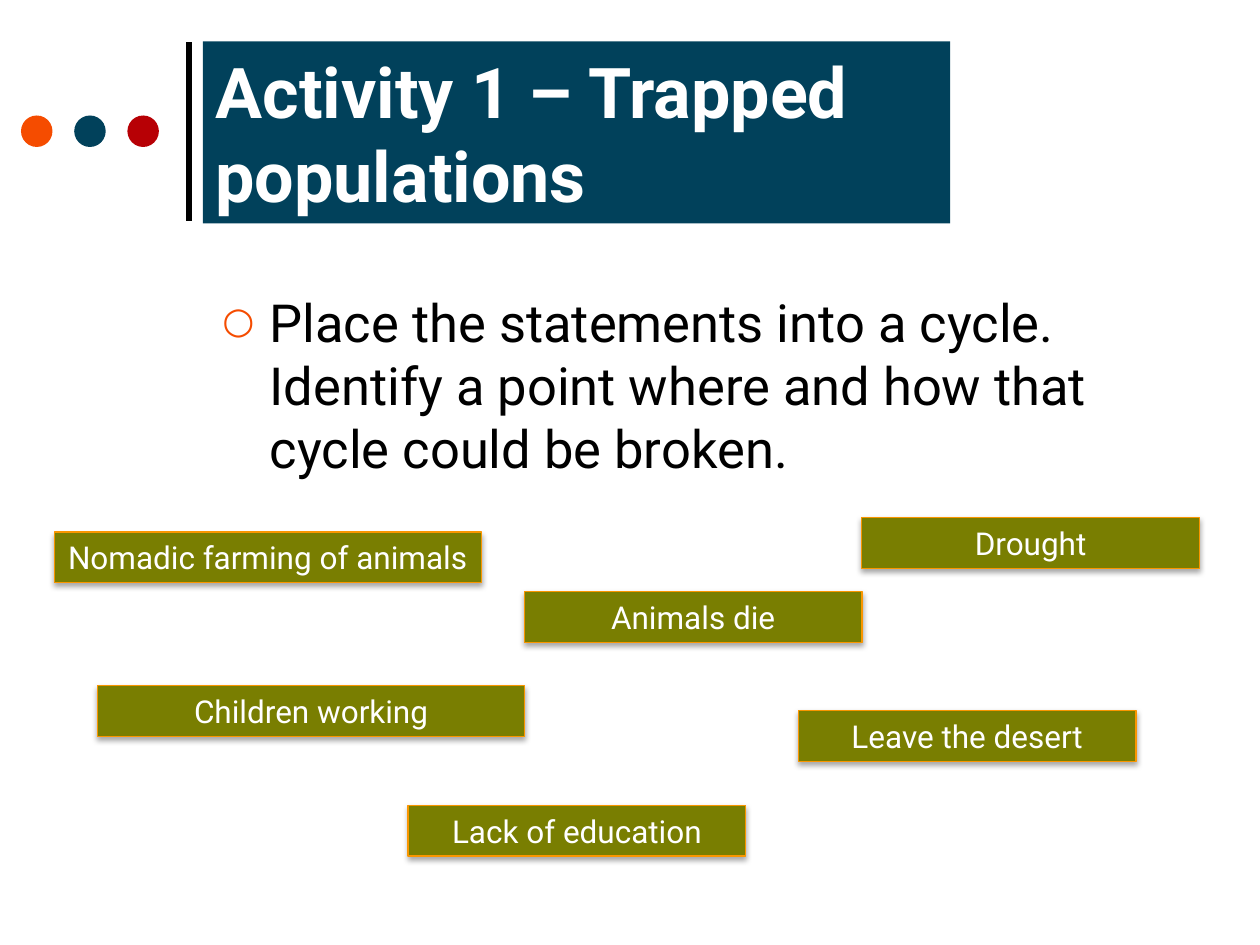
from lxml import etree
from pptx import Presentation
from pptx.dml.color import RGBColor
from pptx.enum.shapes import MSO_CONNECTOR, MSO_SHAPE
from pptx.enum.text import MSO_ANCHOR, MSO_AUTO_SIZE, PP_ALIGN
from pptx.oxml.ns import qn
from pptx.util import Pt

RECT, OVAL = MSO_SHAPE.RECTANGLE, MSO_SHAPE.OVAL
STRAIGHT = MSO_CONNECTOR.STRAIGHT
LEFT, CENTER = PP_ALIGN.LEFT, PP_ALIGN.CENTER
TOP, MIDDLE = MSO_ANCHOR.TOP, MSO_ANCHOR.MIDDLE
NO_FIT, GROW = MSO_AUTO_SIZE.NONE, MSO_AUTO_SIZE.SHAPE_TO_FIT_TEXT

ORANGE, NAVY, RED = "F54C00", "01415B", "B70005"
OLIVE, AMBER, WHITE, BLACK = "797E01", "F99600", "FFFFFF", "000000"


def rgb(value):
    return RGBColor.from_string(value)


def child(parent, tag, **attrs):
    """Append a DrawingML element with the given attributes."""
    return etree.SubElement(parent, qn(tag), {k: str(v) for k, v in attrs.items()})


class Deck:
    font = "Roboto"

    def __init__(self, width, height):
        self.prs = Presentation()
        self.prs.slide_width, self.prs.slide_height = Pt(width), Pt(height)
        self.s = self.prs.slides.add_slide(self.prs.slide_layouts[5])

    def text(self, sp, text, size, color, align=LEFT, anchor=TOP, fit=NO_FIT, bold=False):
        tf = sp.text_frame
        tf.word_wrap, tf.auto_size, tf.vertical_anchor = True, fit, anchor
        p = tf.paragraphs[0]
        p.alignment = align
        r = p.add_run()
        r.text = text
        r.font.name, r.font.size, r.font.bold = self.font, Pt(size), bold
        r.font.color.rgb = rgb(color)
        return p

    def title(self, text, x, y, w, h):
        sp = self.s.shapes.title
        sp.left, sp.top, sp.width, sp.height = Pt(x), Pt(y), Pt(w), Pt(h)
        sp.fill.solid()
        sp.fill.fore_color.rgb = rgb(NAVY)
        self.text(sp, text, 40, WHITE, anchor=MIDDLE, bold=True)

    def shape(self, kind, x, y, w, h, fill, line=None):
        sp = self.s.shapes.add_shape(kind, Pt(x), Pt(y), Pt(w), Pt(h))
        sp.fill.solid()
        sp.fill.fore_color.rgb = rgb(fill)
        if line:
            sp.line.color.rgb = rgb(line)
            sp.line.width = Pt(0.75)
        else:
            sp.line.fill.background()
        sp.shadow.inherit = False
        return sp

    def card(self, text, x, y, w):
        """Statement box with a soft shadow below it."""
        sp = self.shape(RECT, x, y, w, 29, OLIVE, AMBER)
        effects = sp._element.spPr.find(qn("a:effectLst"))
        shadow = child(effects, "a:outerShdw", blurRad=Pt(3.1), dist=Pt(1.8),
                       dir=90 * 60000, rotWithShape=0)
        child(child(shadow, "a:srgbClr", val=BLACK), "a:alpha", val=35000)
        self.text(sp, text, 18, WHITE, align=CENTER, fit=GROW)

    def line(self, x1, y1, x2, y2, color, width):
        c = self.s.shapes.add_connector(STRAIGHT, Pt(x1), Pt(y1), Pt(x2), Pt(y2))
        c.line.color.rgb = rgb(color)
        c.line.width = Pt(width)
        child(c._element.spPr, "a:effectLst")

    def bullet(self, text, x, y, w, h):
        sp = self.s.shapes.add_textbox(Pt(x), Pt(y), Pt(w), Pt(h))
        p = self.text(sp, text, 30, BLACK)
        pPr = p._p.get_or_add_pPr()
        pPr.set("marL", str(Pt(27)))
        pPr.set("indent", str(Pt(-27)))
        child(child(pPr, "a:buClr"), "a:srgbClr", val=ORANGE)
        child(pPr, "a:buSzPct", val=70000)
        child(pPr, "a:buFont", typeface=self.font)
        child(pPr, "a:buChar", char="○")


def main():
    deck = Deck(720, 540)
    deck.line(108, 126, 108, 24, BLACK, 3)
    for i, color in enumerate((ORANGE, NAVY, RED)):
        deck.shape(OVAL, 12 + 30.4 * i, 66, 18, 18, color)
    deck.title("Activity 1 – Trapped populations", 116, 23.6, 427, 104)
    deck.bullet("Place the statements into a cycle. Identify a point where and "
                "how that cycle could be broken.", 120, 162, 552, 312)

    wide, narrow = 244, 193
    statements = [
        ("Nomadic farming of animals", 31, 304, wide),
        ("Children working", 55.8, 391.8, wide),
        ("Animals die", 299.6, 338.2, narrow),
        ("Leave the desert", 456.2, 406, narrow),
        ("Lack of education", 233.2, 460.2, narrow),
        ("Drought", 492.4, 295.8, narrow),
    ]
    for text, x, y, w in statements:
        deck.card(text, x, y, w)
    deck.prs.save("out.pptx")


if __name__ == "__main__":
    main()
